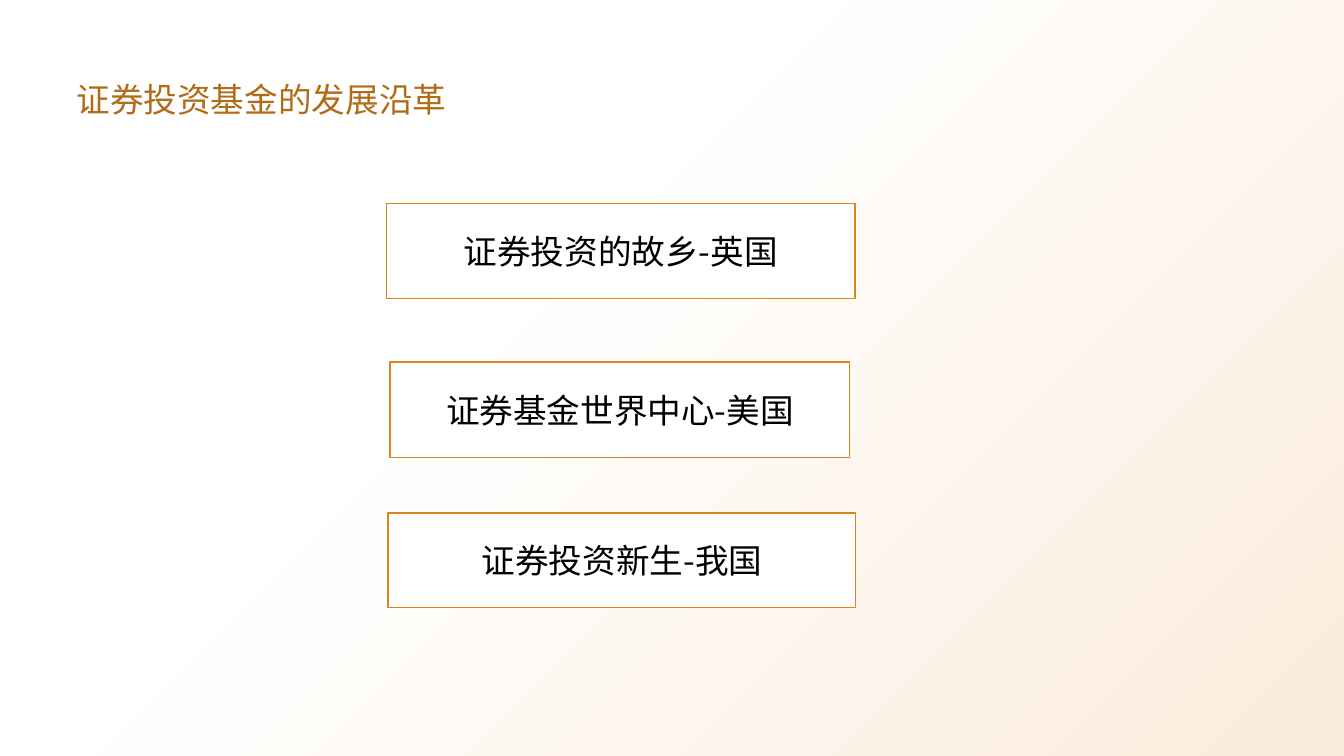
from dataclasses import dataclass

from lxml.etree import SubElement
from pptx import Presentation
from pptx.dml.color import RGBColor as Color
from pptx.enum.shapes import MSO_SHAPE as Preset
from pptx.enum.text import MSO_ANCHOR as Anchor, PP_ALIGN as Align
from pptx.oxml.ns import qn
from pptx.util import Inches, Pt

COLUMNS, ROWS = 40, 30


@dataclass(frozen=True)
class Theme:
    font: str = "Noto Sans CJK SC"
    text_size: int = 24
    border_width: int = 1
    white: str = "FFFFFF"
    cream: str = "FAECDB"
    border: str = "DA841C"
    title: str = "B16C17"
    text: str = "000000"


class SlideBuilder:
    """Places styled elements on a slide, measured in grid columns and rows."""

    def __init__(self, deck, theme):
        self.theme = theme
        self.page = deck.slides.add_slide(deck.slide_layouts[6])
        self.column = deck.slide_width / COLUMNS
        self.row = deck.slide_height / ROWS

    def place(self, left, top, width, height):
        return (round(left * self.column), round(top * self.row),
                round(width * self.column), round(height * self.row))

    def set_text(self, shape, text, color, align, anchor):
        frame = shape.text_frame
        frame.word_wrap = True
        frame.vertical_anchor = anchor
        para = frame.paragraphs[0]
        para.text = text
        para.alignment = align
        font = para.font
        font.name = self.theme.font
        font.size = Pt(self.theme.text_size)
        font.color.rgb = Color.from_string(color)
        # East Asian glyphs take their own typeface entry
        for span in para.runs:
            properties = span._r.get_or_add_rPr()
            SubElement(properties, qn("a:ea"), typeface=self.theme.font)
        return frame

    def rectangle(self, *area):
        shape = self.page.shapes.add_shape(Preset.RECTANGLE, *self.place(*area))
        shape.shadow.inherit = False
        return shape

    def backdrop(self):
        shape = self.rectangle(0, 0, COLUMNS, ROWS)
        shape.line.fill.background()
        shape.fill.gradient()
        shape.fill.gradient_angle = 315
        stops = ((0.37, self.theme.white), (1, self.theme.cream))
        for stop, (position, color) in zip(shape.fill.gradient_stops, stops):
            stop.position = position
            stop.color.rgb = Color.from_string(color)

    def title(self, text, *area):
        box = self.page.shapes.add_textbox(*self.place(*area))
        frame = self.set_text(box, text, self.theme.title, Align.LEFT, Anchor.BOTTOM)
        frame.margin_left = frame.margin_right = 0
        frame.margin_top = frame.margin_bottom = 0

    def card(self, text, *area):
        box = self.rectangle(*area)
        box.fill.solid()
        box.fill.fore_color.rgb = Color.from_string(self.theme.white)
        box.line.color.rgb = Color.from_string(self.theme.border)
        box.line.width = Pt(self.theme.border_width)
        self.set_text(box, text, self.theme.text, Align.CENTER, Anchor.MIDDLE)


def main():
    deck = Presentation()
    deck.slide_width, deck.slide_height = Inches(13.33), Inches(7.5)
    builder = SlideBuilder(deck, Theme())

    # Background and heading
    builder.backdrop()
    builder.title("证券投资基金的发展沿革", 2.28, 1.56, 35.44, 3.16)

    # Stages of development: left, top, width, height
    stages = {
        "证券投资的故乡-英国": (11.5, 8.08, 13.95, 3.76),
        "证券基金世界中心-美国": (11.61, 14.36, 13.68, 3.8),
        "证券投资新生-我国": (11.55, 20.36, 13.92, 3.76),
    }
    for text, area in stages.items():
        builder.card(text, *area)

    deck.save("out.pptx")


if __name__ == "__main__":
    main()
